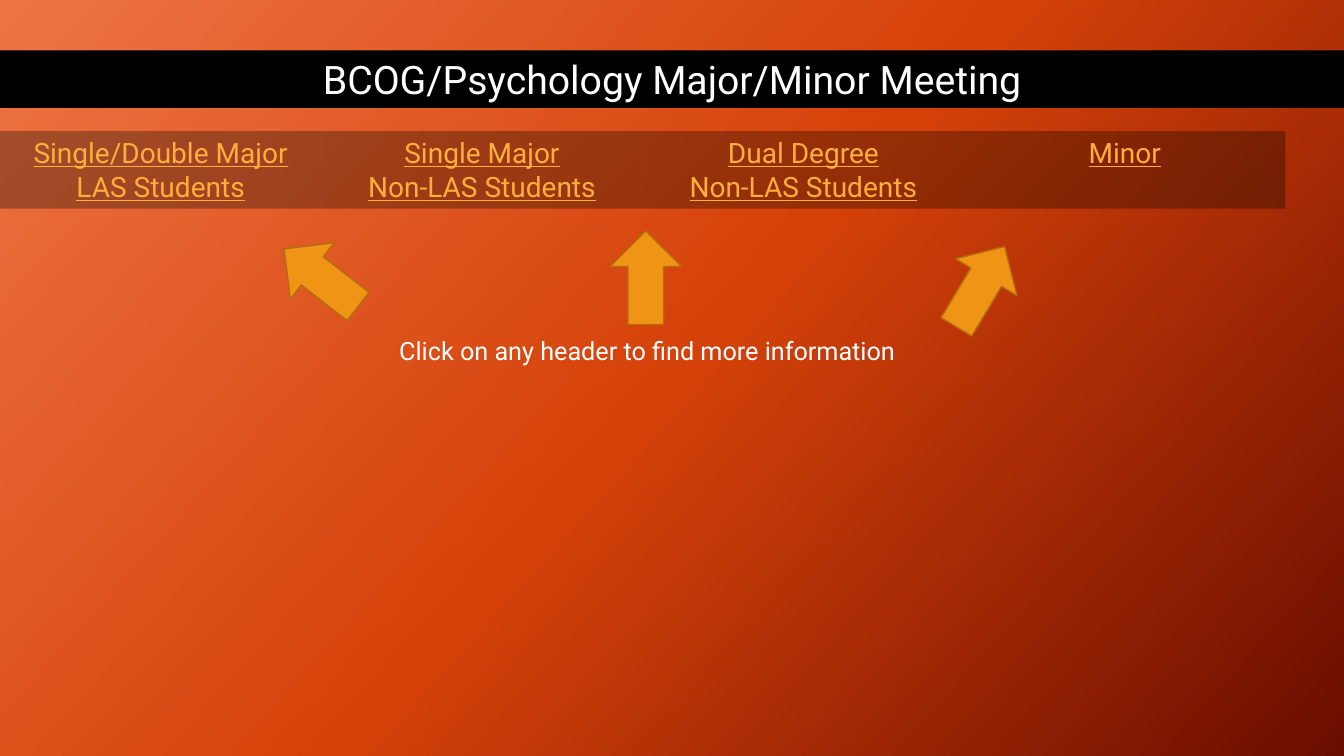
from dataclasses import dataclass

import lxml.etree
import pptx
import pptx.dml.color
import pptx.enum.shapes
import pptx.enum.text
import pptx.oxml
import pptx.oxml.ns
import pptx.util

Inches = pptx.util.Inches
Pt = pptx.util.Pt


@dataclass(frozen=True)
class Theme:
    font: str = "Roboto"
    title_size: int = 28
    header_size: int = 20
    hint_size: int = 18
    band: str = "000000"
    text: str = "FFFFFF"
    link: str = "FFAE3E"
    arrow: str = "F09415"
    arrow_edge: str = "B26D10"
    header_opacity: int = 30
    gradient: tuple = ((0, "EE7444"), (50, "D54209"), (100, "6A0D00"))
    gradient_angle: int = 42


THEME = Theme()
SLIDE_WIDTH, SLIDE_HEIGHT = 13.33, 7.5
HEADERS_WIDTH = 12.75
HEADERS = (
    "Single/Double Major\nLAS Students",
    "Single Major\nNon-LAS Students",
    "Dual Degree\nNon-LAS Students",
    "Minor",
)
# Left, top and rotation of each arrow
ARROWS = ((2.83, 2.29, 307.9), (6.05, 2.29, 0), (9.37, 2.38, 31))


def rgb(code):
    return pptx.dml.color.RGBColor.from_string(code)


def paint_background(slide):
    fill = slide.background.fill
    fill.gradient()
    fill.gradient_angle = 360 - THEME.gradient_angle
    # Replace the preset stops with the three theme stops
    stop_list = fill.gradient_stops[0]._gs.getparent()
    for stop in list(stop_list):
        stop_list.remove(stop)
    for position, code in THEME.gradient:
        stop = lxml.etree.SubElement(
            stop_list, pptx.oxml.ns.qn("a:gs"), pos=str(position * 1000))
        lxml.etree.SubElement(stop, pptx.oxml.ns.qn("a:srgbClr"), val=code)


def fill_band(shape, opacity=100):
    shape.fill.solid()
    shape.fill.fore_color.rgb = rgb(THEME.band)
    if opacity < 100:
        colour = shape.fill._xPr.find(".//" + pptx.oxml.ns.qn("a:srgbClr"))
        lxml.etree.SubElement(
            colour, pptx.oxml.ns.qn("a:alpha"), val=str(opacity * 1000))


def write(shape, words, size, colour, underline=False):
    frame = shape.text_frame
    frame.text = words
    frame.word_wrap = True
    frame.auto_size = pptx.enum.text.MSO_AUTO_SIZE.NONE
    frame.vertical_anchor = pptx.enum.text.MSO_ANCHOR.TOP
    for paragraph in frame.paragraphs:
        paragraph.alignment = pptx.enum.text.PP_ALIGN.CENTER
        for run in paragraph.runs:
            run.font.name = THEME.font
            run.font.size = Pt(size)
            run.font.color.rgb = rgb(colour)
            run.font.underline = underline


def add_title(slide, words):
    title = slide.shapes.title
    title.left, title.top = Inches(0), Inches(0.5)
    title.width, title.height = Inches(SLIDE_WIDTH), Inches(0.57)
    fill_band(title)
    write(title, words, THEME.title_size, THEME.text)


def add_header(slide, column, words):
    width = HEADERS_WIDTH / len(HEADERS)
    header = slide.shapes.add_shape(
        pptx.enum.shapes.MSO_SHAPE.RECTANGLE,
        Inches(column * width), Inches(1.3), Inches(width), Inches(0.77))
    header.shadow.inherit = False
    header.line.fill.background()
    fill_band(header, THEME.header_opacity)
    write(header, words, THEME.header_size, THEME.link, underline=True)


def add_arrow(slide, left, top, rotation):
    arrow = slide.shapes.add_shape(
        pptx.enum.shapes.MSO_SHAPE.UP_ARROW,
        Inches(left), Inches(top), Inches(0.71), Inches(0.93))
    arrow.rotation = rotation
    arrow.shadow.inherit = False
    arrow.fill.solid()
    arrow.fill.fore_color.rgb = rgb(THEME.arrow)
    arrow.line.color.rgb = rgb(THEME.arrow_edge)
    arrow.line.width = Pt(1)


def add_hint(slide, words):
    hint = slide.shapes.add_textbox(
        Inches(3.53), Inches(3.28), Inches(5.78), Inches(0.4))
    write(hint, words, THEME.hint_size, THEME.text)


def main():
    presentation = pptx.Presentation()
    presentation.slide_width = Inches(SLIDE_WIDTH)
    presentation.slide_height = Inches(SLIDE_HEIGHT)
    slide = presentation.slides.add_slide(presentation.slide_layouts[5])

    # Background and title band
    paint_background(slide)
    add_title(slide, "BCOG/Psychology Major/Minor Meeting")

    # Row of headers
    for column, words in enumerate(HEADERS):
        add_header(slide, column, words)

    # Arrows pointing from the hint to the headers
    for left, top, rotation in ARROWS:
        add_arrow(slide, left, top, rotation)
    add_hint(slide, "Click on any header to find more information")

    presentation.save("out.pptx")


if __name__ == "__main__":
    main()
